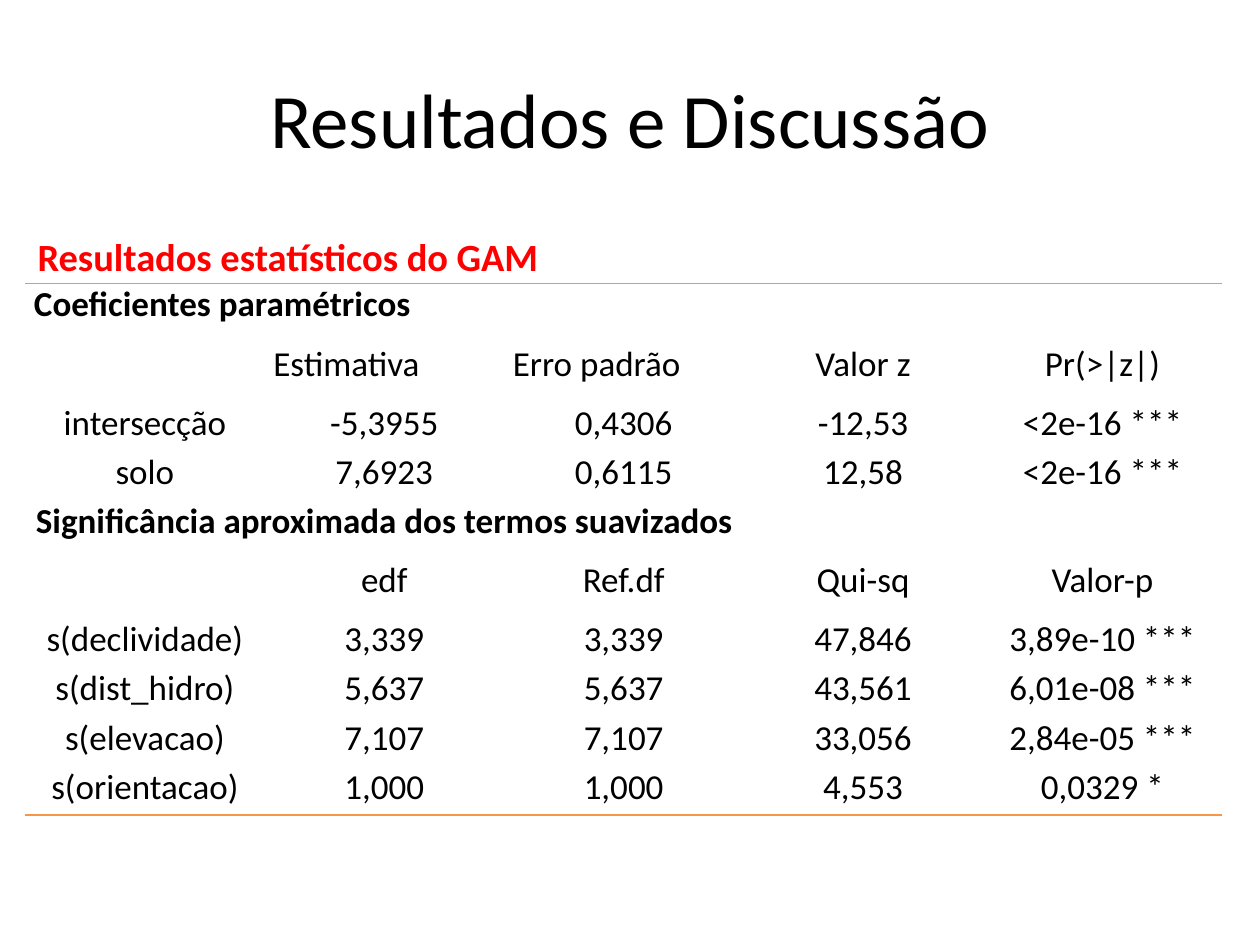
import pptx
import pptx.dml.color
import pptx.enum.text
import pptx.oxml
import pptx.oxml.ns
import pptx.util

ALIGN = pptx.enum.text.PP_ALIGN
ANCHOR = pptx.enum.text.MSO_ANCHOR
ACCENT = "F79646"
PLAIN_STYLE = "{2D5ABB26-0587-4C30-8999-92F81FD0307C}"


def color(value):
    return pptx.dml.color.RGBColor.from_string(value)


class Deck:
    font = "Calibri"
    size = 20
    ink = "000000"

    def __init__(self, width, height):
        self.prs = pptx.Presentation()
        self.prs.slide_width = pptx.util.Inches(width)
        self.prs.slide_height = pptx.util.Inches(height)
        self.s = self.prs.slides.add_slide(self.prs.slide_layouts[6])

    def box(self, x, y, w, h):
        pw, ph = self.prs.slide_width, self.prs.slide_height
        return [round(v) for v in (x * pw, y * ph, w * pw, h * ph)]

    def fill_text(self, tf, text, align, size=None, ink=None, bold=False):
        tf.text = text
        p = tf.paragraphs[0]
        p.alignment = align
        for r in p.runs:
            r.font.name = self.font
            r.font.size = pptx.util.Pt(size or self.size)
            r.font.bold = bold
            r.font.color.rgb = color(ink or self.ink)

    def text(self, area, text, align=ALIGN.LEFT, anchor=ANCHOR.TOP, **style):
        tf = self.s.shapes.add_textbox(*self.box(*area)).text_frame
        tf.word_wrap = True
        tf.vertical_anchor = anchor
        self.fill_text(tf, text, align, **style)

    def border(self, cell, side):
        ln = pptx.oxml.parse_xml(
            f'<a:{side} {pptx.oxml.ns.nsdecls("a")} w="12700"><a:solidFill>'
            f'<a:srgbClr val="{ACCENT}"/></a:solidFill></a:{side}>')
        cell._tc.get_or_add_tcPr().insert(0, ln)

    def table(self, area, rows, heights, headings, justified):
        columns = len(rows[-1])
        shape = self.s.shapes.add_table(len(rows), columns, *self.box(*area))
        table = shape.table
        table.first_row = table.horz_banding = False
        table._tbl.tblPr[0].text = PLAIN_STYLE
        for i, (row, height) in enumerate(zip(rows, heights)):
            table.rows[i].height = pptx.util.Inches(height)
            for j in range(columns):
                cell = table.cell(i, j)
                cell.fill.background()
                cell.margin_left = cell.margin_right = pptx.util.Inches(0.07)
                cell.margin_top = cell.margin_bottom = 0
                if j < len(row) and row[j]:
                    align = ALIGN.JUSTIFY if (i, j) in justified else ALIGN.CENTER
                    self.fill_text(cell.text_frame, row[j], align, bold=i in headings)
                if i == 0:
                    self.border(cell, "lnT")
                if i == len(rows) - 1:
                    self.border(cell, "lnB")
            if i in headings:
                table.cell(i, 0).merge(table.cell(i, headings[i] - 1))

    def save(self):
        self.prs.save("out.pptx")


def main():
    rows = [
        ["Coeficientes paramétricos"],
        ["", "Estimativa", "Erro padrão", "Valor z", "Pr(>|z|)"],
        ["intersecção", "-5,3955", "0,4306", "-12,53", "<2e-16 ***"],
        ["solo", "7,6923", "0,6115", "12,58", "<2e-16 ***"],
        ["Significância aproximada dos termos suavizados"],
        ["", "edf", "Ref.df", "Qui-sq", "Valor-p"],
        ["s(declividade)", "3,339", "3,339", "47,846", "3,89e-10 ***"],
        ["s(dist_hidro)", "5,637", "5,637", "43,561", "6,01e-08 ***"],
        ["s(elevacao)", "7,107", "7,107", "33,056", "2,84e-05 ***"],
        ["s(orientacao)", "1,000", "1,000", "4,553", "0,0329 *"],
    ]
    headings = {0: 2, 4: 3}
    heights = [0.47 if i in headings or not row[0] else 0.39
               for i, row in enumerate(rows)]
    deck = Deck(10, 7.5)
    deck.text((0.05, 0.04, 0.9, 0.17), "Resultados e Discussão",
              ALIGN.CENTER, ANCHOR.MIDDLE, size=44)
    deck.table((0.02, 0.3, 0.95, 0.57), rows, heights, headings,
               {(0, 0), (1, 1), (1, 2)})
    deck.text((0.02, 0.24, 0.9, 0.06), "Resultados estatísticos do GAM",
              size=22, ink="FF0000", bold=True)
    deck.save()


if __name__ == "__main__":
    main()
